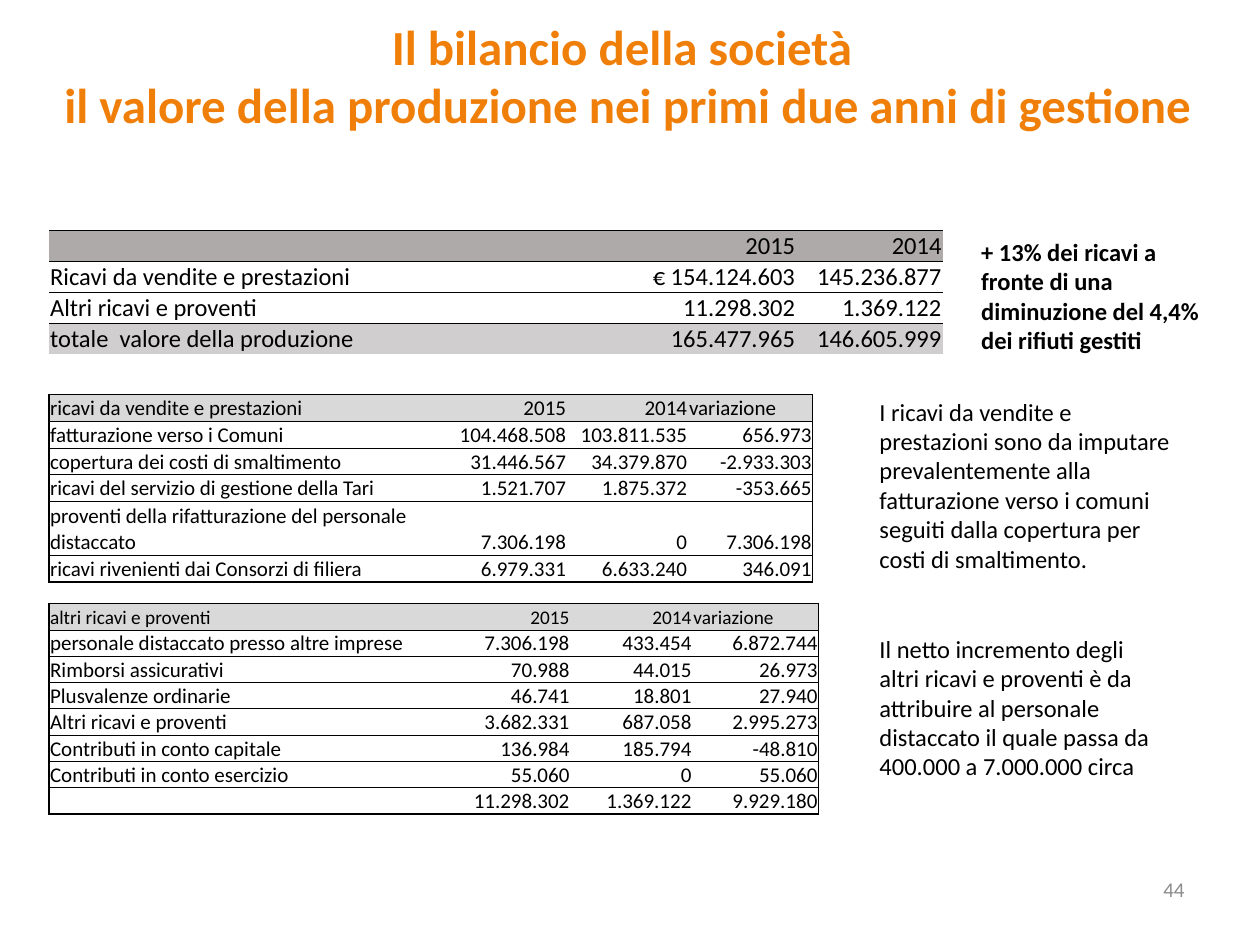
from lxml import etree
from pptx import Presentation
from pptx.dml.color import RGBColor
from pptx.enum.text import MSO_ANCHOR, MSO_AUTO_SIZE, PP_ALIGN
from pptx.oxml.ns import qn
from pptx.util import Cm, Pt

BLACK = RGBColor(0x00, 0x00, 0x00)
ORANGE = RGBColor(0xF0, 0x7F, 0x09)
NUMBER_GRAY = RGBColor(0x8C, 0x8C, 0x8C)
HEADER_GRAY = RGBColor(0xAE, 0xAA, 0xAA)
TOTAL_GRAY = RGBColor(0xD0, 0xCE, 0xCE)
DETAIL_GRAY = RGBColor(0xD9, 0xD9, 0xD9)

PLAIN_TABLE_STYLE = "{2D5ABB26-0587-4C30-8999-92F81FD0307C}"
THIN, THICK = 0.5, 1
TABLE_LEFT = 0.99
NOTE_LEFT = 17.48

SUMMARY_ROWS = [
    ["", "2015", "2014"],
    ["Ricavi da vendite e prestazioni", "€ 154.124.603", "145.236.877"],
    ["Altri ricavi e proventi", "11.298.302", "1.369.122"],
    ["totale  valore della produzione", "165.477.965", "146.605.999"],
]
OTHER_INCOME_ROWS = [
    ["altri ricavi e proventi", "2015", "2014", "variazione"],
    ["personale distaccato presso altre imprese", "7.306.198", "433.454", "6.872.744"],
    ["Rimborsi assicurativi", "70.988", "44.015", "26.973"],
    ["Plusvalenze ordinarie", "46.741", "18.801", "27.940"],
    ["Altri ricavi e proventi", "3.682.331", "687.058", "2.995.273"],
    ["Contributi in conto capitale", "136.984", "185.794", "-48.810"],
    ["Contributi in conto esercizio", "55.060", "0", "55.060"],
    ["", "11.298.302", "1.369.122", "9.929.180"],
]
SALES_ROWS = [
    ["ricavi da vendite e prestazioni", "2015", "2014", "variazione"],
    ["fatturazione verso i Comuni", "104.468.508", "103.811.535", "656.973"],
    ["copertura dei costi di smaltimento", "31.446.567", "34.379.870", "-2.933.303"],
    ["ricavi del servizio di gestione della Tari", "1.521.707", "1.875.372", "-353.665"],
    ["proventi della rifatturazione del personale distaccato",
     "7.306.198", "0", "7.306.198"],
    ["ricavi rivenienti dai Consorzi di filiera", "6.979.331", "6.633.240", "346.091"],
]


class SlideBuilder:
    font_name = "Calibri"

    def __init__(self, slide):
        self.slide = slide

    def format_paragraph(self, paragraph, size, color=BLACK, bold=False,
                         align=PP_ALIGN.LEFT):
        paragraph.alignment = align
        for run in paragraph.runs:
            run.font.name = self.font_name
            run.font.size = Pt(size)
            run.font.bold = bold
            run.font.color.rgb = color
        if not paragraph.runs:
            # Keeps an empty cell from stretching its row.
            etree.SubElement(paragraph._p, qn("a:endParaRPr"), sz=str(size * 100))

    def add_text(self, text, left, top, width, height, size=14, color=BLACK,
                 bold=False, align=PP_ALIGN.LEFT, grow=True):
        box = self.slide.shapes.add_textbox(Cm(left), Cm(top), Cm(width), Cm(height))
        frame = box.text_frame
        frame.word_wrap = True
        if grow:
            frame.auto_size = MSO_AUTO_SIZE.SHAPE_TO_FIT_TEXT
        else:
            frame.vertical_anchor = MSO_ANCHOR.MIDDLE
        frame.text = text
        for paragraph in frame.paragraphs:
            self.format_paragraph(paragraph, size, color, bold, align)

    def add_borders(self, cell, left=0, right=0, top=0, bottom=0):
        """Draw black cell borders; widths are in points and 0 means none."""
        properties = cell._tc.get_or_add_tcPr()
        for side, width in zip("LRTB", (left, right, top, bottom)):
            if width:
                line = etree.SubElement(properties, qn(f"a:ln{side}"), w=str(Pt(width)))
                fill = etree.SubElement(line, qn("a:solidFill"))
                etree.SubElement(fill, qn("a:srgbClr"), val=str(BLACK))

    def add_table(self, rows, top, column_widths, row_heights, row_fills,
                  size=12, header_size=12, boxed=True):
        """Add a table; row_fills maps row numbers to colours, boxed adds a frame."""
        last_row, last_column = len(rows) - 1, len(column_widths) - 1
        frame = self.slide.shapes.add_table(
            len(rows), len(column_widths), Cm(TABLE_LEFT), Cm(top),
            Cm(sum(column_widths)), Cm(sum(row_heights)))
        table = frame.table
        table.first_row = table.horz_banding = False
        table._tbl.tblPr.find(qn("a:tableStyleId")).text = PLAIN_TABLE_STYLE
        for column, width in zip(table.columns, column_widths):
            column.width = Cm(width)
        for row, height in zip(table.rows, row_heights):
            row.height = Cm(height)

        for i, values in enumerate(rows):
            for j, value in enumerate(values):
                cell = table.cell(i, j)
                cell.margin_left = cell.margin_right = cell.margin_top = Cm(0.02)
                cell.margin_bottom = 0
                cell.vertical_anchor = MSO_ANCHOR.BOTTOM
                cell.text_frame.text = value
                is_label = j == 0 or value == "variazione"
                self.format_paragraph(
                    cell.text_frame.paragraphs[0], size if i else header_size,
                    align=PP_ALIGN.LEFT if is_label else PP_ALIGN.RIGHT)
                outer = THICK if boxed else 0
                self.add_borders(
                    cell,
                    left=outer if j == 0 else 0,
                    right=outer if j == last_column else 0,
                    top=THICK if boxed and i == 0 else THIN,
                    bottom=outer if i == last_row else THIN)
                if i in row_fills:
                    cell.fill.solid()
                    cell.fill.fore_color.rgb = row_fills[i]
                else:
                    cell.fill.background()


def main():
    presentation = Presentation()
    presentation.slide_width, presentation.slide_height = Cm(25.4), Cm(19.05)
    builder = SlideBuilder(presentation.slides.add_slide(presentation.slide_layouts[6]))

    builder.add_text(
        "Il bilancio della società \n"
        "il valore della produzione nei primi due anni di gestione",
        0.05, 0.2, 25.2, 2.64, size=28, color=ORANGE, bold=True, align=PP_ALIGN.CENTER)
    builder.add_table(SUMMARY_ROWS, 4.65, [11.76, 3.3, 2.95], [0.62] * 4,
                      {0: HEADER_GRAY, 3: TOTAL_GRAY},
                      size=14, header_size=14, boxed=False)
    builder.add_text(
        "+ 13% dei ricavi a fronte di una diminuzione del 4,4% dei rifiuti gestiti",
        19.53, 4.65, 5.21, 2.64, bold=True)
    builder.add_table(OTHER_INCOME_ROWS, 12.17, [7.77, 2.74, 2.46, 2.54], [0.53] * 8,
                      {0: DETAIL_GRAY}, header_size=11)
    builder.add_table(SALES_ROWS, 7.95, [7.72, 2.72, 2.44, 2.51],
                      [0.54] * 4 + [1.08, 0.54], {0: DETAIL_GRAY})
    builder.add_text(
        "Il netto incremento degli altri ricavi e proventi è da attribuire al personale "
        "distaccato il quale passa da 400.000 a 7.000.000 circa",
        NOTE_LEFT, 12.65, 6.22, 3.25)
    builder.add_text(
        "I ricavi da vendite e prestazioni sono da imputare prevalentemente alla "
        "fatturazione verso i comuni seguiti dalla copertura per costi di smaltimento.",
        NOTE_LEFT, 7.87, 6.68, 3.84)
    builder.add_text("44", 18.21, 17.53, 5.92, 0.79, size=12, color=NUMBER_GRAY,
                     align=PP_ALIGN.RIGHT, grow=False)

    presentation.save("out.pptx")


if __name__ == "__main__":
    main()
